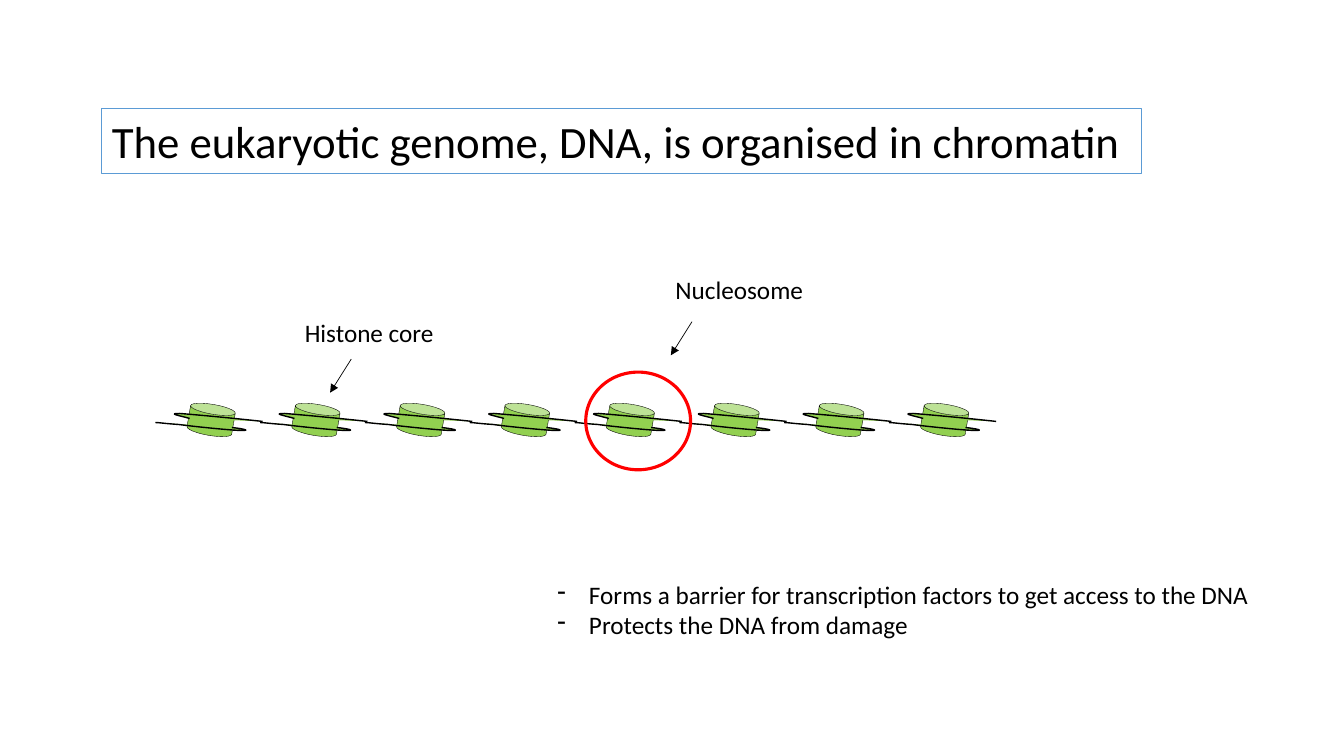
from dataclasses import dataclass

from lxml import etree
from pptx import Presentation
from pptx.dml.color import RGBColor
from pptx.enum.shapes import MSO_CONNECTOR as CONN, MSO_SHAPE as SHAPE
from pptx.enum.text import MSO_ANCHOR as ANCHOR, MSO_AUTO_SIZE as AUTO, PP_ALIGN as ALIGN
from pptx.oxml.ns import qn
from pptx.util import Pt


@dataclass(frozen=True)
class Theme:
    font: str = "Calibri"
    title: float = 32
    body: float = 18
    ink: RGBColor = RGBColor(0, 0, 0)
    frame: RGBColor = RGBColor(0x5B, 0x9B, 0xD5)
    histone: RGBColor = RGBColor(0x92, 0xD0, 0x50)
    mark: RGBColor = RGBColor(0xFF, 0, 0)


T = Theme()
COUNT, PITCH = 8, 74.85
MARKED = 4

# A start point, then three points for each cubic curve, relative to the nucleosome.
LOWER_STRAND = [
    (54.7, 16.6),
    (61.9, 17.3), (68.4, 18.7), (61.9, 18.7),
    (55.4, 18.7), (26.6, 15.8), (16.6, 14.4),
    (5.8, 13.7), (2.9, 13), (0, 13),
]
UPPER_STRAND = [
    (24.5, 10.1),
    (16.6, 7.9), (8.6, 6.5), (17.3, 6.5),
    (25.9, 7.2), (51.1, 9.4), (76.6, 12.2),
]


def place(sp, x, y, w, h):
    sp.left, sp.top, sp.width, sp.height = Pt(x), Pt(y), Pt(w), Pt(h)


def style(sp, line, width, fill=None):
    sp.shadow.inherit = False
    if fill is None:
        sp.fill.background()
    else:
        sp.fill.solid()
        sp.fill.fore_color.rgb = fill
    sp.line.color.rgb = line
    sp.line.width = Pt(width)


def write(sp, *lines, size=T.body, wrap=True, bullet=None, indent=22.5):
    """Fill a shape with left-aligned paragraphs, bulleted if a character is given."""
    tf = sp.text_frame
    tf.word_wrap, tf.auto_size, tf.vertical_anchor = wrap, AUTO.NONE, ANCHOR.TOP
    for i, line in enumerate(lines):
        p = tf.add_paragraph() if i else tf.paragraphs[0]
        p.alignment, p.line_spacing = ALIGN.LEFT, 1.0
        p.space_before = p.space_after = Pt(0)
        r = p.add_run()
        r.text = line
        r.font.name, r.font.size, r.font.color.rgb = T.font, Pt(size), T.ink
        if bullet:
            pPr = p._p.get_or_add_pPr()
            pPr.set("marL", str(Pt(indent)))
            pPr.set("indent", str(-Pt(indent)))
            etree.SubElement(pPr, qn("a:buFontTx"))
            etree.SubElement(pPr, qn("a:buChar"), char=bullet)


def set_list_size(sp, size):
    """Set the type size that the bullets of a placeholder follow."""
    level = etree.SubElement(sp._element.txBody.find(qn("a:lstStyle")), qn("a:lvl1pPr"))
    etree.SubElement(level, qn("a:defRPr"), sz=str(size * 100))


def curve_segments(sp):
    """Turn each three line segments of a freeform into one cubic curve."""
    lines = list(sp._element.iter(qn("a:lnTo")))
    for i in range(0, len(lines), 3):
        curve = etree.Element(qn("a:cubicBezTo"))
        lines[i].addprevious(curve)
        for line in lines[i:i + 3]:
            curve.append(line[0])
            line.getparent().remove(line)


def strand(shapes, x, y, offsets):
    points = [(Pt(x + dx), Pt(y + dy)) for dx, dy in offsets]
    builder = shapes.build_freeform(*points[0])
    builder.add_line_segments(points[1:], close=False)
    sp = builder.convert_to_shape()
    curve_segments(sp)
    style(sp, T.ink, 1, T.histone)


def nucleosome(shapes, x, y):
    can = shapes.add_shape(SHAPE.CAN, Pt(x + 23.6), Pt(y), Pt(32.4), Pt(22.3))
    can.adjustments[0] = 0.313
    can.rotation = 9.7
    style(can, T.ink, 0.25, T.histone)
    strand(shapes, x, y, LOWER_STRAND)
    strand(shapes, x, y, UPPER_STRAND)


def label(s, text, x, y, w, arrow_dx, arrow_dy):
    """Write a caption with an arrow that starts at an offset from its corner."""
    write(s.shapes.add_textbox(Pt(x), Pt(y), Pt(w), Pt(28.8)), text, wrap=False)
    ax, ay = x + arrow_dx, y + arrow_dy
    arrow = s.shapes.add_connector(CONN.STRAIGHT, Pt(ax), Pt(ay), Pt(ax - 15.1), Pt(ay + 24))
    arrow.line.color.rgb, arrow.line.width = T.ink, Pt(0.5)
    etree.SubElement(arrow.line._get_or_add_ln(), qn("a:tailEnd"), type="triangle")
    etree.SubElement(arrow._element.spPr, qn("a:effectLst"))


def chromatin(s, x, y):
    """Draw the string of nucleosomes, the ring round one, and the labels."""
    string = s.shapes.add_group_shape()
    for i in range(COUNT):
        nucleosome(string.shapes, x + i * PITCH, y)
    ring = s.shapes.add_shape(SHAPE.OVAL, Pt(x + MARKED * PITCH + 8), Pt(y - 23),
                              Pt(PITCH), Pt(69.8))
    style(ring, T.mark, 2.25)
    label(s, "Nucleosome", x + 364.4, y - 96.4, 106.6, 18.9, 37.4)
    label(s, "Histone core", x + 99.6, y - 65.9, 107.3, 40.3, 33.6)


def heading(s, x, y, w, h):
    title = s.shapes.title
    place(title, x, y, w, h)
    title.fill.background()
    title.line.color.rgb, title.line.width = T.frame, Pt(0.75)
    write(title, "The eukaryotic genome, DNA, is organised in chromatin", size=T.title)


def effects(s, x, y, w, h):
    body = s.placeholders[1]
    place(body, x, y, w, h)
    set_list_size(body, T.body)
    write(body, "Forms a barrier for transcription factors to get access to the DNA",
          "Protects the DNA from damage", bullet="-")


def main():
    prs = Presentation()
    prs.slide_width, prs.slide_height = Pt(960), Pt(540)
    s = prs.slides.add_slide(prs.slide_layouts[1])
    heading(s, 72.7, 77.8, 742.6, 46.1)
    chromatin(s, 111, 288.8)
    effects(s, 391, 410, 513.4, 51.1)
    prs.save("out.pptx")


if __name__ == "__main__":
    main()
